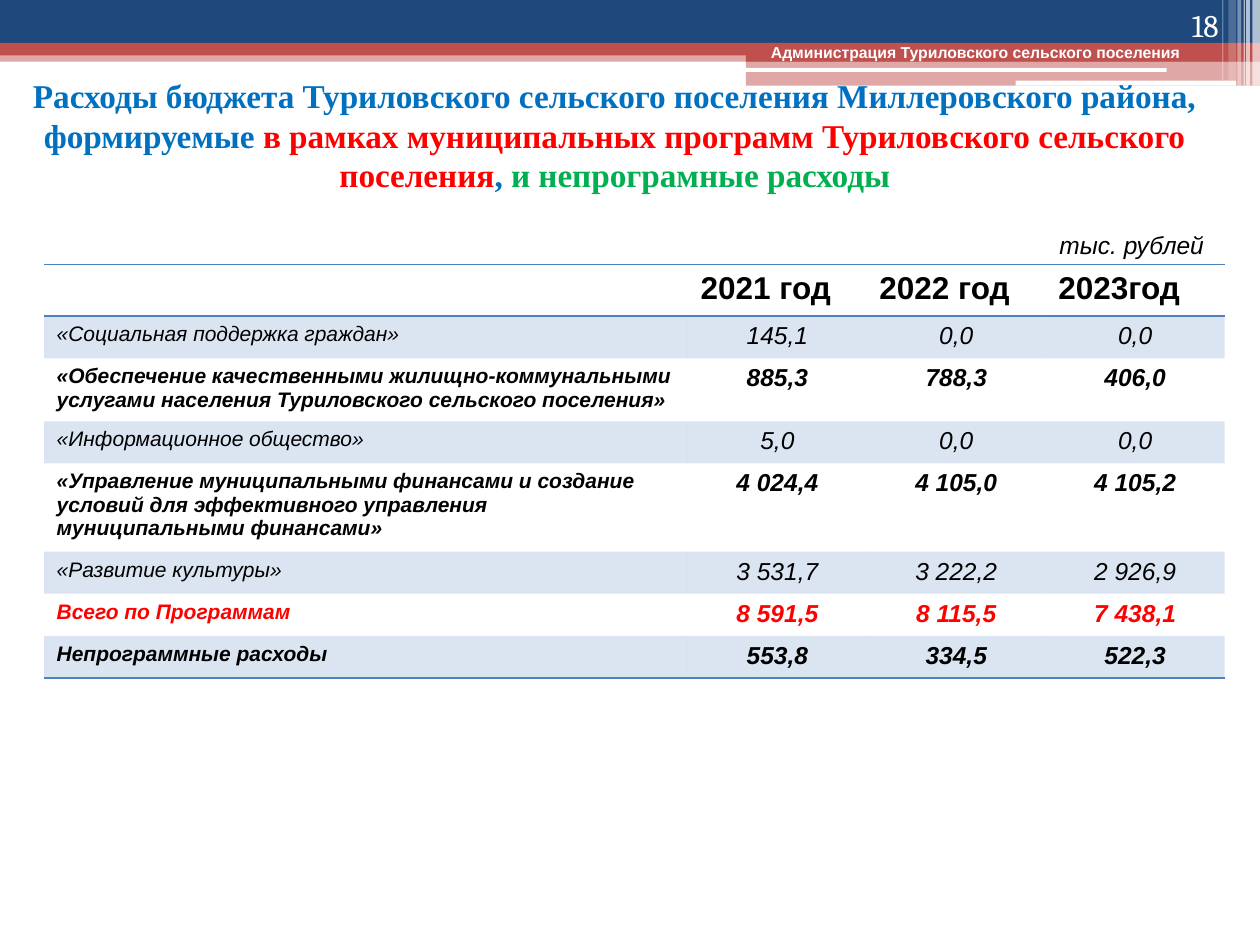
from dataclasses import dataclass

from lxml import etree
from pptx import Presentation
from pptx.dml.color import RGBColor
from pptx.enum import shapes, text
from pptx.oxml import ns
from pptx.util import Inches, Pt


@dataclass(frozen=True)
class Theme:
    navy: str = "1F497D"
    brick: str = "C0504D"
    white: str = "FFFFFF"
    black: str = "000000"
    blue: str = "0070C0"
    red: str = "FF0000"
    green: str = "00B050"
    line: str = "4F81BD"
    sans: str = "Arial"
    serif: str = "Times New Roman"
    number: str = "Cambria"
    tiny: int = 9
    small: int = 12
    body: int = 14
    large: int = 18
    title: int = 19


T = Theme()
LEFT, MID, RIGHT = text.PP_ALIGN.LEFT, text.PP_ALIGN.CENTER, text.PP_ALIGN.RIGHT
TOP, BOTTOM = text.MSO_ANCHOR.TOP, text.MSO_ANCHOR.BOTTOM
NO_STYLE = "{2D5ABB26-0587-4C30-8999-92F81FD0307C}"

HEADS = ["", "2021 год", "2022 год", "2023год"]
# Row height, bold, colour, label, values by year
ROWS = [
    (0.32, False, T.black, "«Социальная поддержка граждан»", "145,1", "0,0", "0,0"),
    (0.48, True, T.black,
     "«Обеспечение качественными жилищно-коммунальными услугами населения "
     "Туриловского сельского поселения»", "885,3", "788,3", "406,0"),
    (0.32, False, T.black, "«Информационное общество»", "5,0", "0,0", "0,0"),
    (0.66, True, T.black,
     "«Управление муниципальными финансами и создание условий для "
     "эффективного управления муниципальными финансами»",
     "4 024,4", "4 105,0", "4 105,2"),
    (0.32, False, T.black, "«Развитие культуры»", "3 531,7", "3 222,2", "2 926,9"),
    (0.32, True, T.red, "Всего по Программам", "8 591,5", "8 115,5", "7 438,1"),
    (0.32, True, T.black, "Непрограммные расходы", "553,8", "334,5", "522,3"),
]


def paint(fill, color, alpha=100):
    """Fill with a solid colour; alpha is in percent."""
    fill.solid()
    fill.fore_color.rgb = RGBColor.from_string(color)
    if alpha < 100:
        node = next(fill._xPr.iter(ns.qn("a:srgbClr")))
        etree.SubElement(node, ns.qn("a:alpha"), val=str(alpha * 1000))


def style(run, size, color, face=T.sans, bold=False, italic=False):
    font = run.font
    font.size, font.name, font.bold, font.italic = Pt(size), face, bold, italic
    font.color.rgb = RGBColor.from_string(color)


def bar(slide, box, color, alpha=100, kind=shapes.MSO_SHAPE.RECTANGLE):
    shape = slide.shapes.add_shape(kind, *map(Inches, box))
    shape.shadow.inherit = False
    shape.line.fill.background()
    paint(shape.fill, color, alpha)


def label(slide, box, parts, size, face=T.sans, align=LEFT, anchor=TOP, **look):
    """Add a text box whose parts are (words, colour) pairs."""
    frame = slide.shapes.add_textbox(*map(Inches, box)).text_frame
    frame.word_wrap = True
    frame.vertical_anchor = anchor
    para = frame.paragraphs[0]
    para.alignment = align
    for words, color in parts:
        run = para.add_run()
        run.text = words
        style(run, size, color, face, **look)
    return frame


def banner(slide, box):
    x, y, w, h = box
    split = x + 5.92
    bar(slide, (x, y + 0.4, w, 0.09), T.brick, 50)
    bar(slide, (x, y, w, 0.34), T.navy)
    bar(slide, (x, y + 0.34, w, 0.1), T.brick)
    bar(slide, (split, y + 0.39, x + w - split, 0.1), T.brick)
    bar(slide, (split, y + 0.48, x + w - split, 0.2), T.brick, 50)
    for left, top, wide, high in [(5.91, 0.54, 3.35, 0.03), (8.06, 0.64, 1.75, 0.04)]:
        bar(slide, (x + left, y + top, wide, high), T.white,
            kind=shapes.MSO_SHAPE.ROUNDED_RECTANGLE)
    for left, wide, high, alpha in [
        (9.94, 0.06, h, 65), (9.89, 0.03, h, 65), (9.87, 0.01, h, 60),
        (9.82, 0.03, h, 40), (9.75, 0.06, 0.64, 20), (9.7, 0.01, 0.64, 30),
    ]:
        bar(slide, (x + left, y, wide, high), T.white, alpha)
    label(slide, (x + 6.02, y + 0.29, 3.54, 0.25),
          [("Администрация Туриловского сельского поселения", T.white)],
          T.tiny, bold=True)
    label(slide, (x + 8.94, y, 0.83, 0.4), [("18", T.white)], T.large,
          T.number, RIGHT, BOTTOM)


def heading(slide, box):
    frame = label(slide, box, [
        ("Расходы бюджета Туриловского сельского поселения Миллеровского "
         "района, формируемые ", T.blue),
        ("в рамках муниципальных программ Туриловского сельского поселения", T.red),
        (", ", T.blue),
        ("и непрограмные расходы", T.green),
    ], T.title, T.serif, MID, text.MSO_ANCHOR.MIDDLE, bold=True)
    frame.margin_bottom = Inches(0.37)


def rule(cell, *sides):
    """Draw a line on the given sides, in the order T, B."""
    props = cell._tc.get_or_add_tcPr()
    for spot, side in enumerate(sides):
        edge = etree.Element(ns.qn("a:ln" + side), w=str(Pt(1)))
        solid = etree.SubElement(edge, ns.qn("a:solidFill"))
        etree.SubElement(solid, ns.qn("a:srgbClr"), val=T.line)
        props.insert(spot, edge)


def write(cell, words, size, color, align=LEFT, **look):
    cell.text_frame.text = words
    para = cell.text_frame.paragraphs[0]
    para.alignment = align
    for run in para.runs:
        style(run, size, color, **look)


def budget(slide, box):
    x, y, w, h = box
    grid = slide.shapes.add_table(len(ROWS) + 1, len(HEADS), *map(Inches, box)).table
    grid.first_row = grid.horz_banding = False
    grid._tbl.tblPr.find(ns.qn("a:tableStyleId")).text = NO_STYLE
    year = 1.42
    for col, wide in zip(grid.columns, [w - 3 * year] + [year] * 3):
        col.width = Inches(wide)
    for row, high in zip(grid.rows, [0.41] + [data[0] for data in ROWS]):
        row.height = Inches(high)
    for c, words in enumerate(HEADS):
        cell = grid.cell(0, c)
        write(cell, words, T.large, T.black, bold=True)
        cell.fill.background()
        rule(cell, "T", "B")
    for r, (_, bold, color, *items) in enumerate(ROWS, 1):
        for c, words in enumerate(items):
            cell = grid.cell(r, c)
            write(cell, words, T.body if c else T.small, color,
                  MID if c else LEFT, bold=bold, italic=True)
            if r % 2:
                paint(cell.fill, T.line, 20)
            else:
                cell.fill.background()
            if r == len(ROWS):
                rule(cell, "B")


def main():
    deck = Presentation()
    deck.slide_width, deck.slide_height = Inches(10), Inches(7.5)
    slide = deck.slides.add_slide(deck.slide_layouts[6])
    banner(slide, (0, 0, 10, 0.68))
    heading(slide, (0, 0.6, 9.76, 1.26))
    budget(slide, (0.35, 2.1, 9.37, 3.15))
    label(slide, (8.31, 1.78, 1.42, 0.34), [("тыс. рублей", T.black)],
          T.body, italic=True)
    deck.save("out.pptx")


if __name__ == "__main__":
    main()
